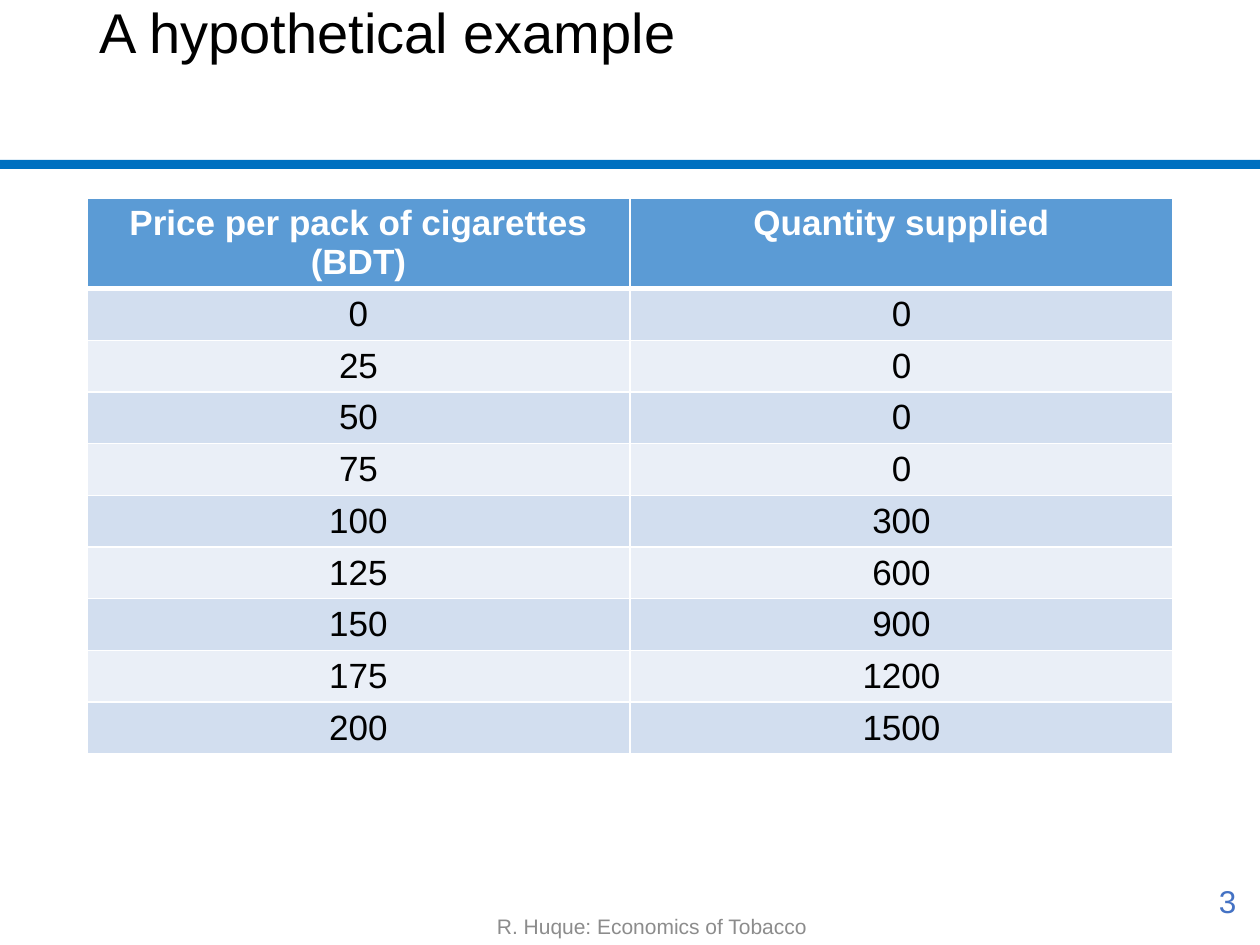
"""Build the supply schedule slide with its title, rule, table and footer."""
from lxml.etree import SubElement
from pptx import Presentation
from pptx.dml.color import RGBColor
from pptx.enum.shapes import MSO_SHAPE
from pptx.enum.text import MSO_ANCHOR, PP_ALIGN
from pptx.oxml.ns import qn
from pptx.util import Inches, Pt

COLORS = {
    "rule": "0070C0", "header": "5B9BD5", "odd": "D2DEEF", "even": "EAEFF7",
    "white": "FFFFFF", "black": "000000", "footer": "8C8C8C", "number": "4472C4",
}
SCHEDULE = [
    ("Price per pack of cigarettes (BDT)", "Quantity supplied"),
    (0, 0), (25, 0), (50, 0), (75, 0), (100, 300),
    (125, 600), (150, 900), (175, 1200), (200, 1500),
]


def write(frame, text, size, color, align, bold=False):
    frame.text = str(text)
    paragraph = frame.paragraphs[0]
    paragraph.alignment = align
    font = paragraph.runs[0].font
    for attribute, value in {"name": "Arial", "size": Pt(size), "bold": bold}.items():
        setattr(font, attribute, value)
    font.color.rgb = RGBColor.from_string(COLORS[color])


def add_borders(cell, widths):
    properties = cell._tc.get_or_add_tcPr()
    for position, (side, width) in enumerate(widths.items()):
        border = SubElement(properties, qn(f"a:ln{side}"), w=str(Pt(width)))
        fill = SubElement(border, qn("a:solidFill"))
        SubElement(fill, qn("a:srgbClr"), val=COLORS["white"])
        properties.insert(position, border)


presentation = Presentation()
presentation.slide_width = Inches(10)
presentation.slide_height = Inches(7.5)
slide = presentation.slides.add_slide(presentation.slide_layouts[5])

rule = slide.shapes.add_shape(
    MSO_SHAPE.RECTANGLE, Inches(0), Inches(1.27), Inches(10), Inches(0.07))
rule.shadow.inherit = False
rule.fill.solid()
rule.fill.fore_color.rgb = RGBColor.from_string(COLORS["rule"])
rule.line.fill.background()

title = slide.shapes.title
placement = {"left": 0.69, "top": -0.01, "width": 8.62, "height": 1.28}
for attribute, value in placement.items():
    setattr(title, attribute, Inches(value))
write(title.text_frame, "A hypothetical example", 32, "black", PP_ALIGN.LEFT)
title.text_frame.vertical_anchor = MSO_ANCHOR.TOP
title.text_frame.paragraphs[0].line_spacing = 0.9

supply = slide.shapes.add_table(
    len(SCHEDULE), 2, Inches(0.69), Inches(1.57), Inches(8.62), Inches(4.1)).table
for row, values in enumerate(SCHEDULE):
    is_header = row == 0
    band = "header" if is_header else "odd" if row % 2 else "even"
    widths = {"L": 1, "R": 1, "T": 3 if row == 1 else 1, "B": 3 if is_header else 1}
    for column, value in enumerate(values):
        cell = supply.cell(row, column)
        write(cell.text_frame, value, 20, "white" if is_header else "black",
              PP_ALIGN.CENTER, is_header)
        cell.fill.solid()
        cell.fill.fore_color.rgb = RGBColor.from_string(COLORS[band])
        add_borders(cell, widths)

FOOTERS = [
    ("R. Huque: Economics of Tobacco", 3.31, 7.1, 3.73, 12, "footer",
     PP_ALIGN.CENTER, MSO_ANCHOR.BOTTOM),
    ("3", 7.66, 6.95, 2.25, 18, "number", PP_ALIGN.RIGHT, MSO_ANCHOR.MIDDLE),
]
for text, left, top, width, size, color, align, anchor in FOOTERS:
    footer = slide.shapes.add_textbox(
        Inches(left), Inches(top), Inches(width), Inches(0.4)).text_frame
    footer.word_wrap = True
    footer.vertical_anchor = anchor
    write(footer, text, size, color, align)

presentation.save("out.pptx")
